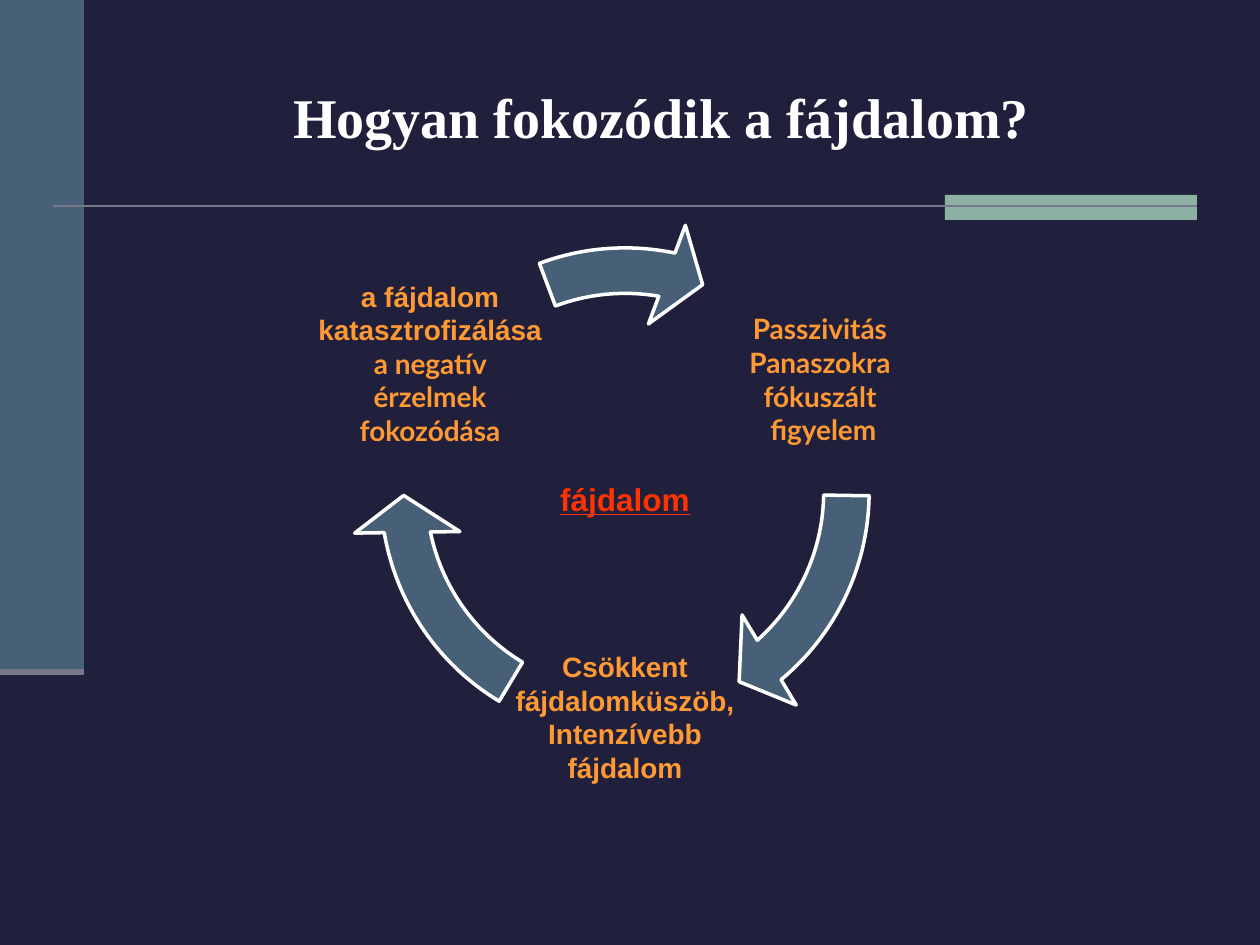
from pptx import Presentation
from pptx.dml.color import RGBColor
from pptx.enum.shapes import MSO_CONNECTOR, MSO_SHAPE
from pptx.enum.text import MSO_ANCHOR, PP_ALIGN
from pptx.oxml.ns import qn
from pptx.util import Emu, Pt

PX_PER_INCH = 126
NIGHT = RGBColor(0x21, 0x20, 0x3C)
SLATE = RGBColor(0x47, 0x60, 0x77)
SAGE = RGBColor(0x8C, 0xB0, 0xA2)
GRAY = RGBColor(0x79, 0x78, 0x8A)
WHITE = RGBColor(0xFF, 0xFF, 0xFF)
ORANGE = RGBColor(0xFF, 0x99, 0x33)
RED = RGBColor(0xFF, 0x33, 0x00)


def px(length):
    return Emu(round(length * 914400 / PX_PER_INCH))


def add_filled(page, preset, left, top, width, height, color):
    shape = page.shapes.add_shape(preset, px(left), px(top), px(width), px(height))
    shape.shadow.inherit = False
    shape.fill.solid()
    shape.fill.fore_color.rgb = color
    shape.line.fill.background()
    return shape


def add_rule(page, left, right, top, weight):
    rule = page.shapes.add_connector(
        MSO_CONNECTOR.STRAIGHT, px(left), px(top), px(right), px(top))
    rule.line.color.rgb = GRAY
    rule.line.width = Pt(weight)
    properties = rule._element.spPr
    properties.append(properties.makeelement(qn("a:effectLst"), {}))


def add_cycle_arrow(page, start, end):
    """Draw one arc of the cycle; angles use the preset's own units."""
    arrow = add_filled(page, MSO_SHAPE.CIRCULAR_ARROW, 351, 218, 548, 548, SLATE)
    for index, value in enumerate((0.083, 5.766, end, start, 0.096)):
        arrow.adjustments[index] = value
    arrow.line.color.rgb = WHITE
    arrow.line.width = Pt(2)


def add_text(page, left, top, width, height, lines, size, color,
             inset=3, bottom_inset=None, underline=None):
    """Add centred bold text; lines holds (text, font) pairs."""
    box = page.shapes.add_textbox(px(left), px(top), px(width), px(height))
    frame = box.text_frame
    frame.word_wrap = True
    frame.vertical_anchor = MSO_ANCHOR.MIDDLE
    frame.margin_left = frame.margin_right = frame.margin_top = px(inset)
    frame.margin_bottom = px(inset if bottom_inset is None else bottom_inset)
    for index, (text, font_name) in enumerate(lines):
        para = frame.add_paragraph() if index else frame.paragraphs[0]
        para.alignment = PP_ALIGN.CENTER
        span = para.add_run()
        span.text = text
        span.font.name = font_name
        span.font.size = Pt(size)
        span.font.bold = True
        span.font.underline = underline
        span.font.color.rgb = color


def main():
    deck = Presentation()
    deck.slide_width, deck.slide_height = px(1260), px(945)
    page = deck.slides.add_slide(deck.slide_layouts[6])
    page.background.fill.solid()
    page.background.fill.fore_color.rgb = NIGHT

    # Side band, accent block and rules
    add_filled(page, MSO_SHAPE.RECTANGLE, 0, 0, 84, 672, SLATE)
    add_filled(page, MSO_SHAPE.RECTANGLE, 945, 195, 252, 25, SAGE)
    add_rule(page, 53, 1197, 206, 1.5)
    add_rule(page, 0, 84, 672, 3.5)

    # Title
    add_text(page, 126, 38, 1071, 157,
             [("Hogyan fokozódik a fájdalom?", "Times New Roman")], 32, WHITE)

    # Cycle arrows: right, left, top
    for start, end in ((0.532, 29.617), (72.617, 101.702), (149.687, 168.547)):
        add_cycle_arrow(page, start, end)

    # Cycle stages: left, top, bottom inset, lines
    stages = (
        (704, 263, 3, [("Passzivitás", "Lato"), ("Panaszokra fókuszált", "Lato"),
                       (" figyelem", "Lato")]),
        (509, 601, 3, [("Csökkent fájdalomküszöb,", "Arial"),
                       ("Intenzívebb fájdalom", "Arial")]),
        (314, 263, 35, [("a fájdalom katasztrofizálása", "Arial"),
                        ("a negatív érzelmek fokozódása", "Lato")]),
    )
    for left, top, bottom_inset, lines in stages:
        add_text(page, left, top, 232, 232, lines, 16, ORANGE,
                 bottom_inset=bottom_inset)

    # Centre of the cycle
    add_text(page, 511, 473, 228, 51, [("fájdalom", "Arial")], 18, RED,
             inset=6, underline=True)

    deck.save("out.pptx")


if __name__ == "__main__":
    main()
